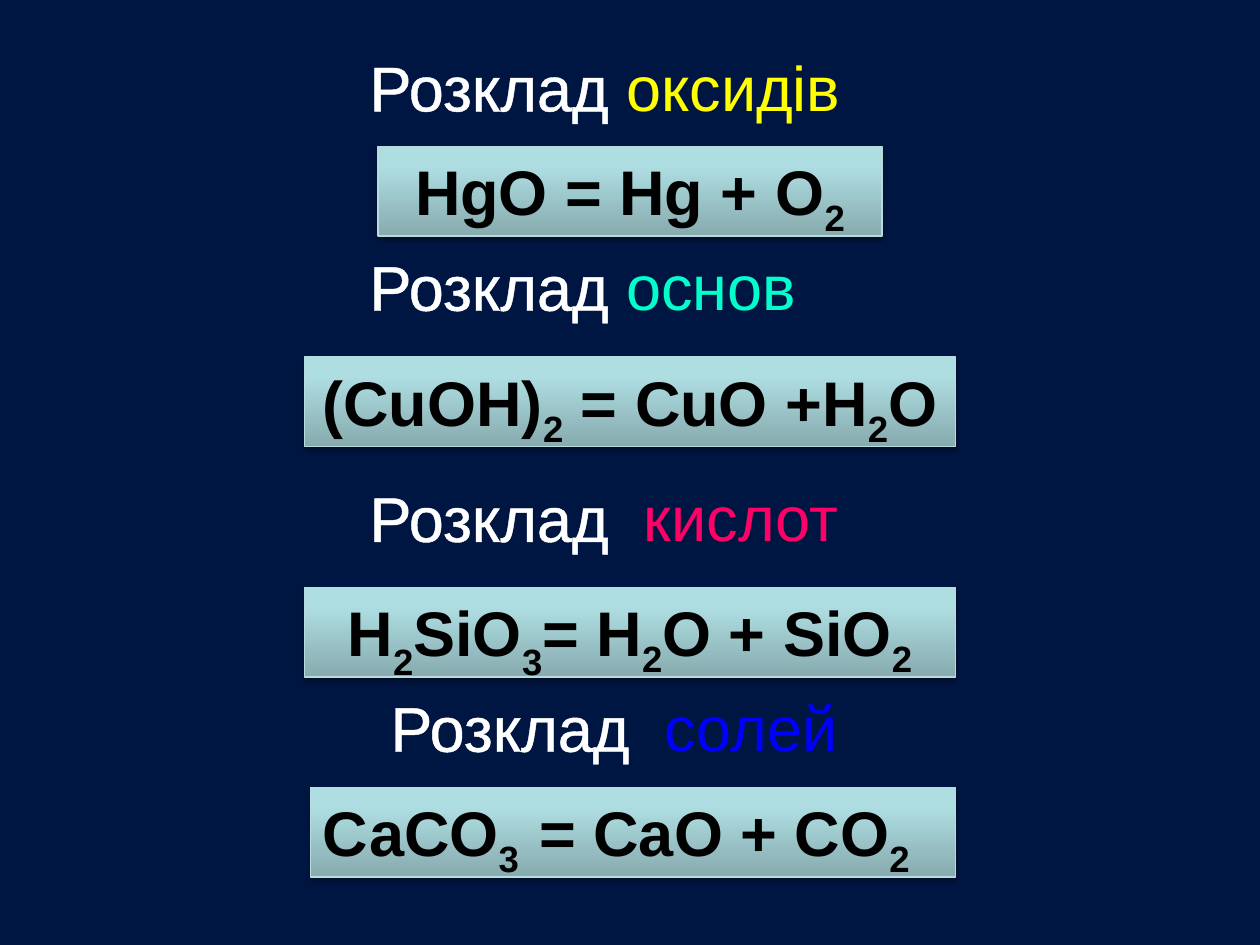
from lxml.etree import SubElement
from pptx import Presentation
from pptx.dml.color import RGBColor
from pptx.enum.shapes import MSO_SHAPE
from pptx.enum.text import MSO_ANCHOR, MSO_AUTO_SIZE, PP_ALIGN
from pptx.oxml import parse_xml
from pptx.oxml.ns import nsdecls, qn
from pptx.util import Cm, Pt

NAVY = RGBColor(0x00, 0x16, 0x42)
WHITE = RGBColor(0xFF, 0xFF, 0xFF)
BLACK = RGBColor(0x00, 0x00, 0x00)
YELLOW = RGBColor(0xFF, 0xFF, 0x00)
MINT = RGBColor(0x00, 0xFF, 0xCC)
PINK = RGBColor(0xFF, 0x00, 0x66)
RED = RGBColor(0xFF, 0x00, 0x00)
BLUE = RGBColor(0x00, 0x00, 0xFF)
PALE_EDGE = RGBColor(0xB6, 0xDC, 0xDF)
PANEL_STOPS = (
    (0, RGBColor(0x87, 0xAB, 0xAE)),
    (80, RGBColor(0xAF, 0xDE, 0xE2)),
    (100, RGBColor(0xAF, 0xE0, 0xE4)),
)


def add_text(paragraph, text, *, color, bold=False, baseline=0, outline=None):
    """Append one run; baseline is a percentage, negative for a subscript."""
    run = paragraph.add_run()
    run.text = text
    font = run.font
    font.name, font.size, font.bold = "Arial", Pt(36), bold
    font.color.rgb = color
    properties = run._r.get_or_add_rPr()
    if baseline:
        properties.set("baseline", str(baseline * 1000))
    if outline is not None:
        properties.insert(0, parse_xml(
            f'<a:ln {nsdecls("a")} w="{Pt(1.45)}"><a:solidFill>'
            f'<a:srgbClr val="{outline}"/></a:solidFill></a:ln>'))


class ReactionSlide:
    row_height = Cm(1.8)

    def __init__(self, presentation):
        self.slide = presentation.slides.add_slide(presentation.slide_layouts[6])
        background = self.slide.background.fill
        background.solid()
        background.fore_color.rgb = NAVY

    def prepare(self, frame):
        frame.word_wrap = True
        frame.auto_size = MSO_AUTO_SIZE.SHAPE_TO_FIT_TEXT
        frame.vertical_anchor = MSO_ANCHOR.TOP
        return frame.paragraphs[0]

    def heading(self, left, top, width, lead, kind, color, outline):
        box = self.slide.shapes.add_textbox(
            Cm(left), Cm(top), Cm(width), self.row_height)
        line = self.prepare(box.text_frame)
        add_text(line, lead, color=WHITE, outline=WHITE)
        add_text(line, kind, color=color, outline=outline)

    def equation(self, left, top, width, parts, align=PP_ALIGN.CENTER):
        panel = self.slide.shapes.add_shape(
            MSO_SHAPE.RECTANGLE, Cm(left), Cm(top), Cm(width), self.row_height)
        self.paint(panel)
        line = self.prepare(panel.text_frame)
        line.alignment = align
        for text, baseline in parts:
            add_text(line, text, color=BLACK, bold=True, baseline=baseline)

    def paint(self, panel):
        # Gradient running from the bottom edge up
        panel.fill.gradient()
        panel.fill.gradient_angle = 90
        stops = panel._element.spPr.find(qn("a:gradFill")).find(qn("a:gsLst"))
        for stop in list(stops):
            stops.remove(stop)
        for position, color in PANEL_STOPS:
            stop = SubElement(stops, qn("a:gs"), pos=str(position * 1000))
            SubElement(stop, qn("a:srgbClr"), val=str(color))
        panel.line.color.rgb = PALE_EDGE
        panel.line.width = Pt(0.75)
        # Soft shadow straight below
        panel.shadow.inherit = False
        effects = panel._element.spPr.find(qn("a:effectLst"))
        effects.append(parse_xml(
            f'<a:outerShdw {nsdecls("a")} blurRad="{Pt(3.1)}" dist="{Pt(1.8)}" '
            f'dir="5400000" rotWithShape="0"><a:srgbClr val="{BLACK}">'
            '<a:alpha val="35000"/></a:srgbClr></a:outerShdw>'))


def main():
    presentation = Presentation()
    presentation.slide_width, presentation.slide_height = Cm(25.4), Cm(19.05)
    reactions = ReactionSlide(presentation)

    # Oxides
    reactions.heading(7.2, 0.85, 11, "Розклад ", "оксидів", YELLOW, YELLOW)
    reactions.equation(7.62, 2.96, 10.16, [("HgO = Hg + O", 0), ("2", -25)])

    # Bases
    reactions.heading(7.2, 4.87, 9.74, "Розклад ", "основ", MINT, MINT)
    reactions.equation(6.14, 7.2, 13.12, [
        ("(CuOH)", 0), ("2", -25), (" = CuO +H", 0), ("2", -25), ("O", 0)])

    # Acids
    reactions.heading(7.2, 9.53, 10.58, "Розклад  ", "кислот", PINK, RED)
    reactions.equation(6.14, 11.85, 13.12, [
        ("H", 0), ("2", -30), ("SiO", 0), ("3", -30), ("= H", 0),
        ("2", -25), ("O + SiO", 0), ("2", -25)])

    # Salts
    reactions.heading(7.62, 13.76, 10.16, "Розклад  ", "солей", BLUE, BLUE)
    reactions.equation(6.26, 15.88, 13, [
        ("СаCO", 0), ("3  ", -25), ("= CaO + CO", 0), ("2", -25)],
        align=PP_ALIGN.LEFT)

    presentation.save("out.pptx")


if __name__ == "__main__":
    main()
